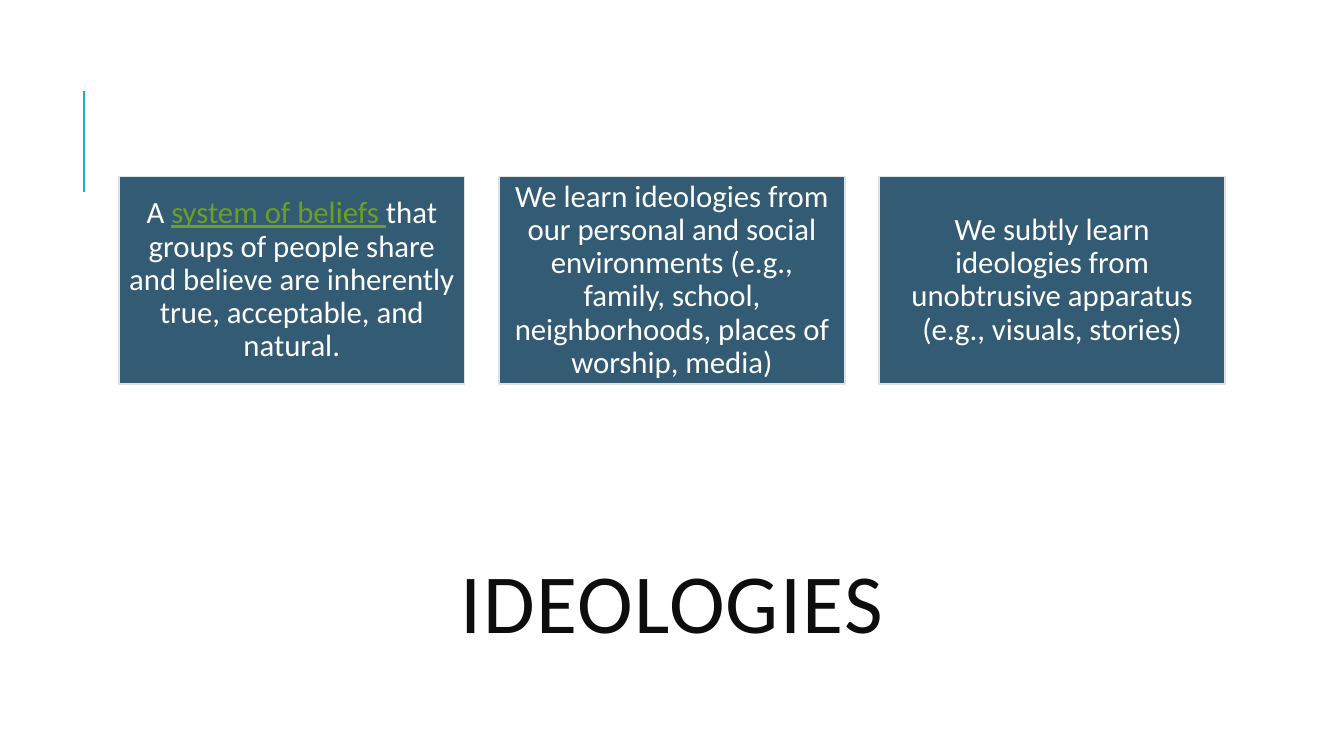
import pptx
import pptx.util
import pptx.dml.color
import pptx.enum.shapes
import pptx.enum.text
from lxml import etree

Cm, Pt = pptx.util.Cm, pptx.util.Pt
COLORS = {"accent": "1CADE4", "box": "335B74", "border": "DFE3E5",
          "title": "0D0D0D", "text": "FFFFFF", "link": "6B9F25"}


def rgb(name):
    return pptx.dml.color.RGBColor.from_string(COLORS[name])


def add_run(p, text, size=22, color="text", underline=False):
    r = p.add_run()
    r.text = text
    r.font.name = "Calibri"
    r.font.size = Pt(size)
    r.font.color.rgb = rgb(color)
    r.font.underline = underline
    return r


prs = pptx.Presentation()
prs.slide_width, prs.slide_height = Cm(33.87), Cm(19.05)
slide = prs.slides.add_slide(prs.slide_layouts[5])

# Accent line
line = slide.shapes.add_connector(pptx.enum.shapes.MSO_CONNECTOR.STRAIGHT,
                                  Cm(2.12), Cm(4.83), Cm(2.12), Cm(2.29))
line.line.color.rgb = rgb("accent")
line.line.width = Pt(1.5)
etree.SubElement(line._element.spPr, pptx.oxml.ns.qn("a:effectLst"))

# Title
title = slide.shapes.title
title.left, title.top, title.width, title.height = Cm(2.97), Cm(13.28), Cm(27.94), Cm(4.14)
tf = title.text_frame
tf.word_wrap = True
tf.auto_size = pptx.enum.text.MSO_AUTO_SIZE.NONE
tf.vertical_anchor = pptx.enum.text.MSO_ANCHOR.MIDDLE
p = tf.paragraphs[0]
p.alignment = pptx.enum.text.PP_ALIGN.CENTER
p.line_spacing = 0.8
r = add_run(p, "IDEOLOGIES", size=60, color="title")
r.font._element.set("spc", "100")

# Row of statement boxes, each a list of (text, format) runs
link = {"color": "link", "underline": True}
statements = [
    [("A ", {}), ("system of beliefs ", link),
     ("that groups of people share and believe are inherently true, acceptable, and natural.", {})],
    [("We learn ideologies from our personal and social environments "
      "(e.g., family, school, neighborhoods, places of worship, media)", {})],
    [("We subtly learn ideologies from unobtrusive apparatus (e.g., visuals, stories)", {})],
]
for i, runs in enumerate(statements):
    sp = slide.shapes.add_shape(pptx.enum.shapes.MSO_SHAPE.RECTANGLE,
                                Cm(3 + i * 9.58), Cm(4.45), Cm(8.71), Cm(5.23))
    sp.shadow.inherit = False
    sp.fill.solid()
    sp.fill.fore_color.rgb = rgb("box")
    sp.line.color.rgb = rgb("border")
    sp.line.width = Pt(1.25)
    tf = sp.text_frame
    tf.word_wrap = True
    tf.vertical_anchor = pptx.enum.text.MSO_ANCHOR.MIDDLE
    tf.margin_left = tf.margin_right = tf.margin_top = tf.margin_bottom = Cm(0.23)
    p = tf.paragraphs[0]
    p.alignment = pptx.enum.text.PP_ALIGN.CENTER
    p.line_spacing = 0.9
    for text, fmt in runs:
        add_run(p, text, **fmt)

prs.save("out.pptx")
